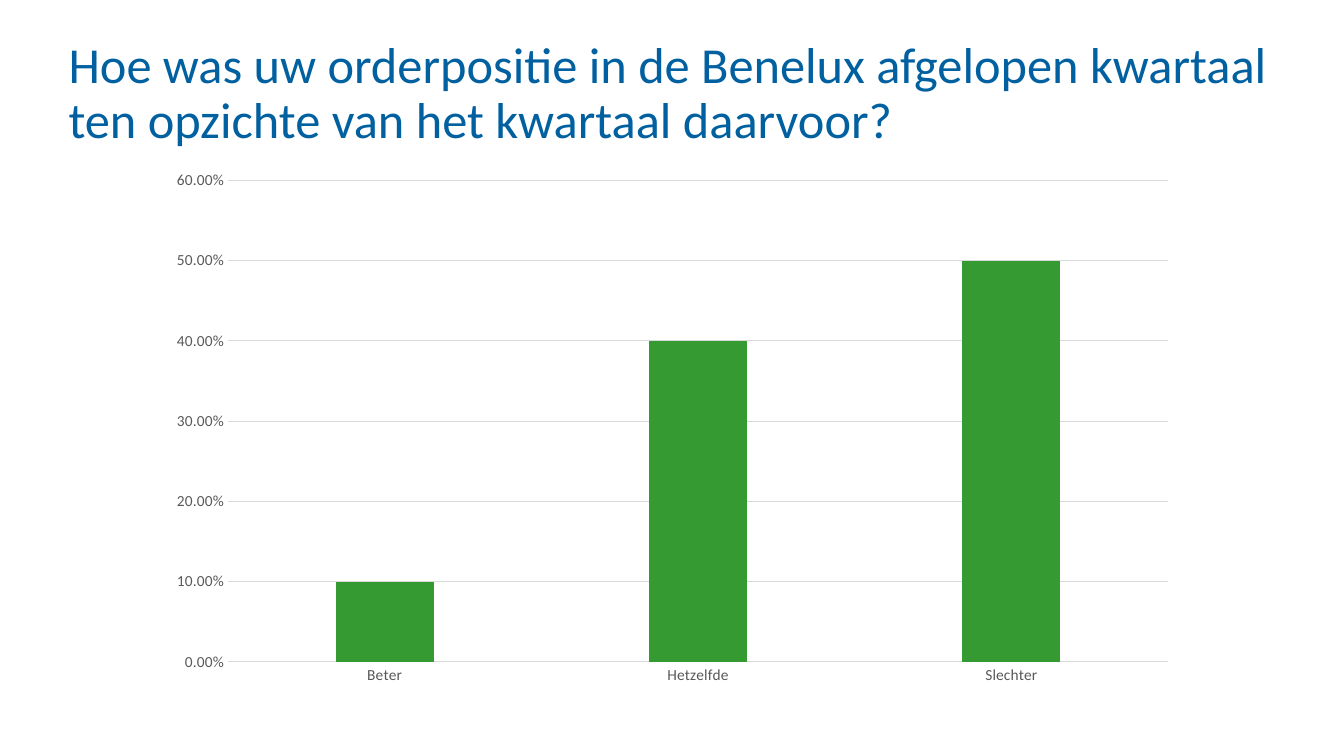
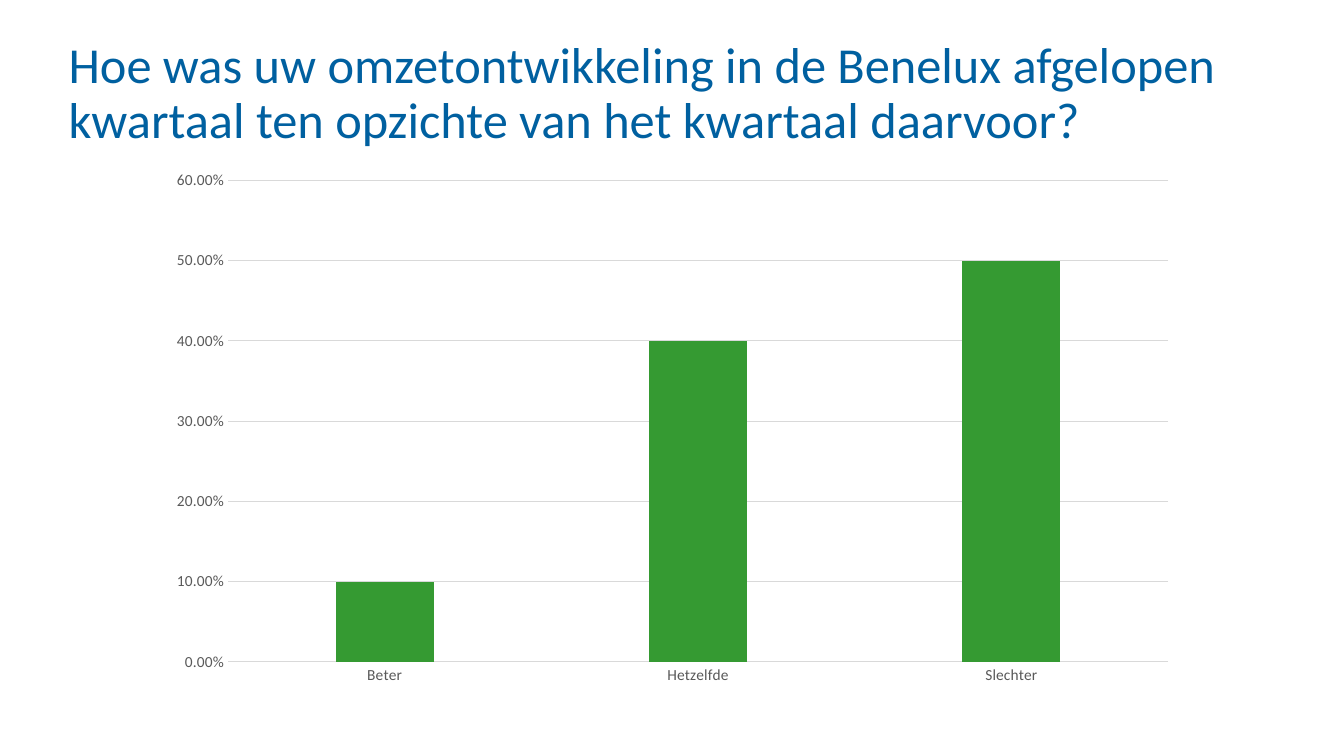
from pptx import Presentation
from pptx.chart.data import CategoryChartData
from pptx.dml.color import RGBColor
from pptx.enum.chart import XL_CHART_TYPE, XL_TICK_MARK
from pptx.enum.text import MSO_ANCHOR, MSO_AUTO_SIZE, PP_ALIGN
from pptx.util import Inches, Pt

COLUMN = XL_CHART_TYPE.COLUMN_CLUSTERED
NO_TICK = XL_TICK_MARK.NONE
TOP = MSO_ANCHOR.TOP
NO_FIT = MSO_AUTO_SIZE.NONE
LEFT = PP_ALIGN.LEFT

FONT = "Calibri"
BLUE, GREEN, GRAY, LIGHT = "0060A0", "359A32", "595959", "D9D9D9"
CATEGORIES = ["Beter", "Hetzelfde", "Slechter"]

SLIDES = [
    ("Hoe was uw orderpositie in de Benelux afgelopen kwartaal "
     "ten opzichte van het kwartaal daarvoor?", 11.99, [0.1, 0.4, 0.5]),
    ("Hoe was uw omzetontwikkeling in de Benelux afgelopen kwartaal "
     "ten opzichte van het kwartaal daarvoor?", 11.91, [0.1, 0.4, 0.5]),
]


def rgb(value):
    return RGBColor.from_string(value)


def style_font(font, size, color):
    font.name = FONT
    font.size = Pt(size)
    font.color.rgb = rgb(color)


prs = Presentation()
prs.slide_width = Inches(13.33)
prs.slide_height = Inches(7.5)

for question, title_width, values in SLIDES:
    s = prs.slides.add_slide(prs.slide_layouts[5])

    title = s.shapes.title
    title.left, title.top = Inches(0.68), Inches(0.4)
    title.width, title.height = Inches(title_width), Inches(0.76)
    tf = title.text_frame
    tf.word_wrap = True
    tf.auto_size = NO_FIT
    tf.vertical_anchor = TOP
    tf.margin_left = tf.margin_top = tf.margin_right = tf.margin_bottom = 0
    p = tf.paragraphs[0]
    p.alignment = LEFT
    p.line_spacing = 0.9
    r = p.add_run()
    r.text = question
    style_font(r.font, 36, BLUE)

    data = CategoryChartData(number_format="0.00%")
    data.categories = CATEGORIES
    data.add_series("Series 1", values)
    chart = s.shapes.add_chart(COLUMN, Inches(1.55), Inches(1.59),
                               Inches(10.24), Inches(5.31), data).chart
    chart.has_title = False
    chart.has_legend = False
    style_font(chart.font, 10, "000000")

    plot = chart.plots[0]
    plot.gap_width = 219
    plot.overlap = -27
    plot.vary_by_categories = False
    fill = plot.series[0].format.fill
    fill.solid()
    fill.fore_color.rgb = rgb(GREEN)

    cat_axis, val_axis = chart.category_axis, chart.value_axis
    for axis in (cat_axis, val_axis):
        axis.major_tick_mark = axis.minor_tick_mark = NO_TICK
        style_font(axis.tick_labels.font, 11, GRAY)

    val_axis.has_major_gridlines = True
    val_axis.minimum_scale = 0
    val_axis.maximum_scale = 0.6
    val_axis.major_unit = 0.1
    val_axis.tick_labels.number_format = "0.00%"
    val_axis.tick_labels.number_format_is_linked = False
    val_axis.format.line.fill.background()
    for line in (cat_axis.format.line, val_axis.major_gridlines.format.line):
        line.color.rgb = rgb(LIGHT)
        line.width = Pt(0.75)

prs.save("out.pptx")
